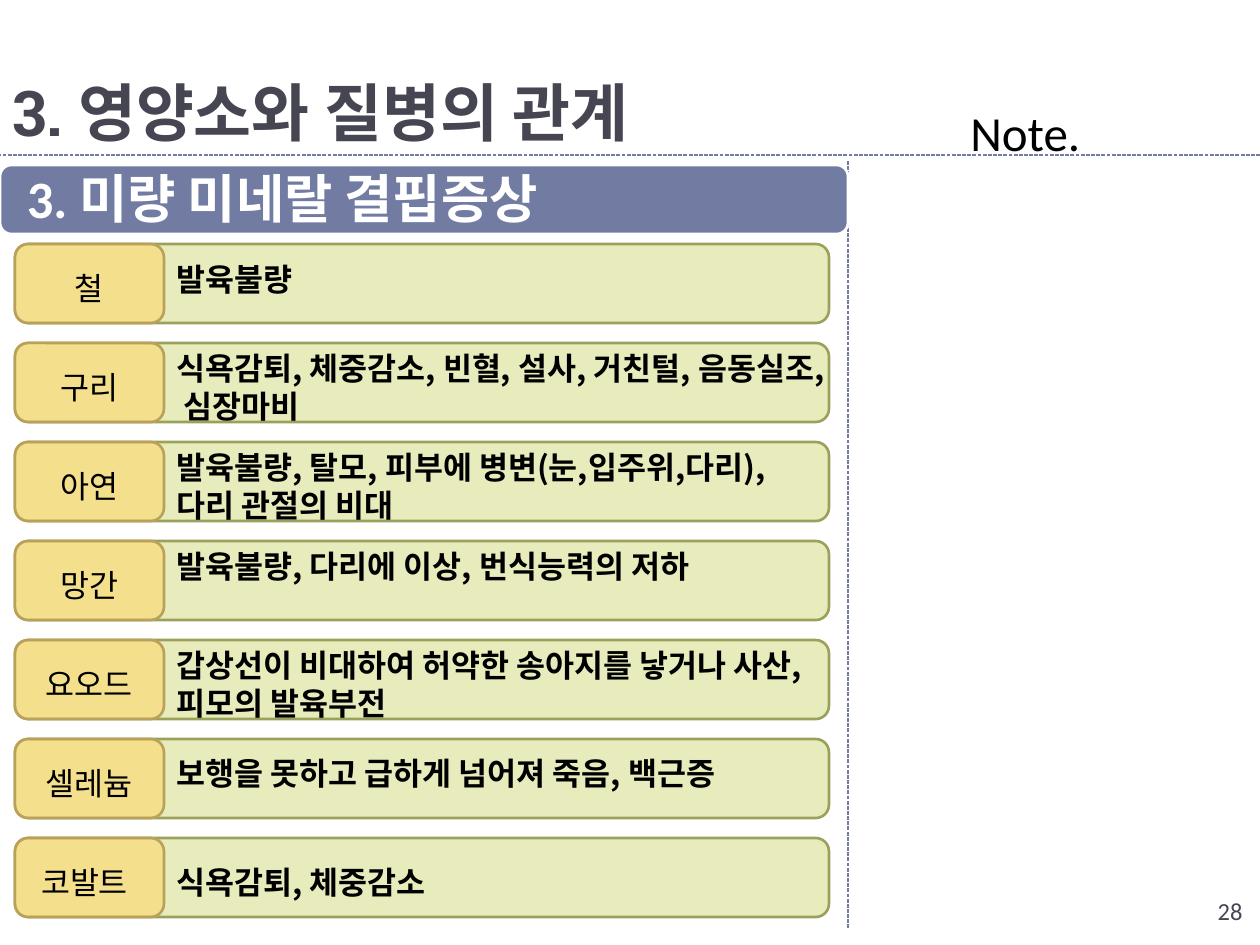
from lxml import etree
from pptx import Presentation
from pptx.dml.color import RGBColor
from pptx.enum.dml import MSO_LINE
from pptx.enum.shapes import MSO_CONNECTOR, MSO_SHAPE
from pptx.enum.text import MSO_ANCHOR, PP_ALIGN
from pptx.oxml.ns import qn
from pptx.util import Emu, Pt

EMU_PER_PX = 914400 / 126
ROUNDED = MSO_SHAPE.ROUNDED_RECTANGLE
STRAIGHT = MSO_CONNECTOR.STRAIGHT
DASH = MSO_LINE.SQUARE_DOT
LEFT, CENTER, RIGHT = PP_ALIGN.LEFT, PP_ALIGN.CENTER, PP_ALIGN.RIGHT
TOP, MIDDLE, BOTTOM = MSO_ANCHOR.TOP, MSO_ANCHOR.MIDDLE, MSO_ANCHOR.BOTTOM

LATIN_FONT = "Calibri"
TITLE_FONT = "Roboto Slab"
KOREAN_FONT = "Noto Sans CJK KR"
BLACK, WHITE, SLATE, INDIGO = "000000", "FFFFFF", "464653", "727CA3"

ROW_LEFT, ROW_TOP, ROW_PITCH = 15, 244, 99
ROW_WIDTH, ROW_HEIGHT = 814, 79
LABEL_WIDTH, LABEL_DROP = 149, 19

# mineral, deficiency symptoms, drop of the symptoms, shift of the label
MINERALS = [
    ("철", "발육불량", 10, 0),
    ("구리", "식욕감퇴, 체중감소, 빈혈, 설사, 거친털, 음동실조, 심장마비", 0, 0),
    ("아연", "발육불량, 탈모, 피부에 병변(눈,입주위,다리), 다리 관절의 비대", 0, 0),
    ("망간", "발육불량, 다리에 이상, 번식능력의 저하", 0, 0),
    ("요오드", "갑상선이 비대하여 허약한 송아지를 낳거나 사산, 피모의 발육부전", 0, 0),
    ("셀레늄", "보행을 못하고 급하게 넘어져 죽음, 백근증", 9, 0),
    ("코발트", "식욕감퇴, 체중감소", 19, -5),
]


def px(value):
    return Emu(round(value * EMU_PER_PX))


def color(hex_string):
    return RGBColor.from_string(hex_string)


def add_text(slide, text, left, top, width, height, size, font=LATIN_FONT,
             hex_color=BLACK, bold=False, align=LEFT, anchor=TOP):
    box = slide.shapes.add_textbox(px(left), px(top), px(width), px(height))
    frame = box.text_frame
    frame.text = text
    frame.word_wrap = True
    frame.vertical_anchor = anchor
    paragraph = frame.paragraphs[0]
    paragraph.alignment = align
    run = paragraph.runs[0]
    run.font.name = font
    run.font.size = Pt(size)
    run.font.bold = bold
    run.font.color.rgb = color(hex_color)
    east_asian = etree.SubElement(run.font._element, qn("a:ea"))
    east_asian.set("typeface", KOREAN_FONT)
    return frame


def add_panel(slide, left, top, width, height, fill, line, opacity=100):
    panel = slide.shapes.add_shape(ROUNDED, px(left), px(top), px(width), px(height))
    panel.shadow.inherit = False
    panel.fill.solid()
    panel.fill.fore_color.rgb = color(fill)
    panel.line.color.rgb = color(line)
    panel.line.width = Pt(1.5)
    if opacity < 100:
        solid_color = panel._element.spPr.find(qn("a:solidFill"))[0]
        alpha = etree.SubElement(solid_color, qn("a:alpha"))
        alpha.set("val", str(opacity * 1000))


def add_dashed_line(slide, x1, y1, x2, y2):
    line = slide.shapes.add_connector(STRAIGHT, px(x1), px(y1), px(x2), px(y2))
    line.line.color.rgb = color(INDIGO)
    line.line.width = Pt(0.75)
    line.line.dash_style = DASH
    etree.SubElement(line._element.spPr, qn("a:effectLst"))


def add_header(slide):
    add_panel(slide, 0, 165, 848, 69, INDIGO, WHITE)
    frame = add_text(slide, "3. 미량 미네랄 결핍증상", 8, 170, 833, 63, 30,
                     hex_color=WHITE, bold=True, anchor=MIDDLE)
    frame.margin_left = frame.margin_right = px(19)
    frame.margin_top = frame.margin_bottom = px(19)
    frame.paragraphs[0].line_spacing = 0.9


def add_mineral_row(slide, top, mineral, symptoms, symptom_drop, label_shift):
    add_panel(slide, ROW_LEFT, top, ROW_WIDTH, ROW_HEIGHT, "D2DA7A", "9BA15A", 50)
    add_panel(slide, ROW_LEFT, top, LABEL_WIDTH, ROW_HEIGHT, "FADA7A", "B9A15A", 70)
    add_text(slide, symptoms, ROW_LEFT + LABEL_WIDTH, top + symptom_drop,
             ROW_WIDTH - LABEL_WIDTH, 50, 18, font=KOREAN_FONT, bold=True)
    add_text(slide, mineral, ROW_LEFT + label_shift, top + LABEL_DROP,
             LABEL_WIDTH, 50, 18, align=CENTER)


def main():
    presentation = Presentation()
    presentation.slide_width = px(1260)
    presentation.slide_height = px(945)
    slide = presentation.slides.add_slide(presentation.slide_layouts[6])

    add_text(slide, "Note.", 958, 96, 149, 130, 28)
    add_dashed_line(slide, 848, 161, 848, 929)
    add_dashed_line(slide, 1260, 155, 0, 155)
    add_text(slide, "28", 982, 890, 273, 50, 14, hex_color=SLATE, align=RIGHT)
    add_text(slide, "3. 영양소와 질병의 관계", 0, 59, 1260, 96, 36,
             font=TITLE_FONT, hex_color=SLATE, bold=True, anchor=BOTTOM)
    for index, mineral_row in enumerate(MINERALS):
        add_mineral_row(slide, ROW_TOP + index * ROW_PITCH, *mineral_row)
    add_header(slide)

    presentation.save("out.pptx")


if __name__ == "__main__":
    main()
